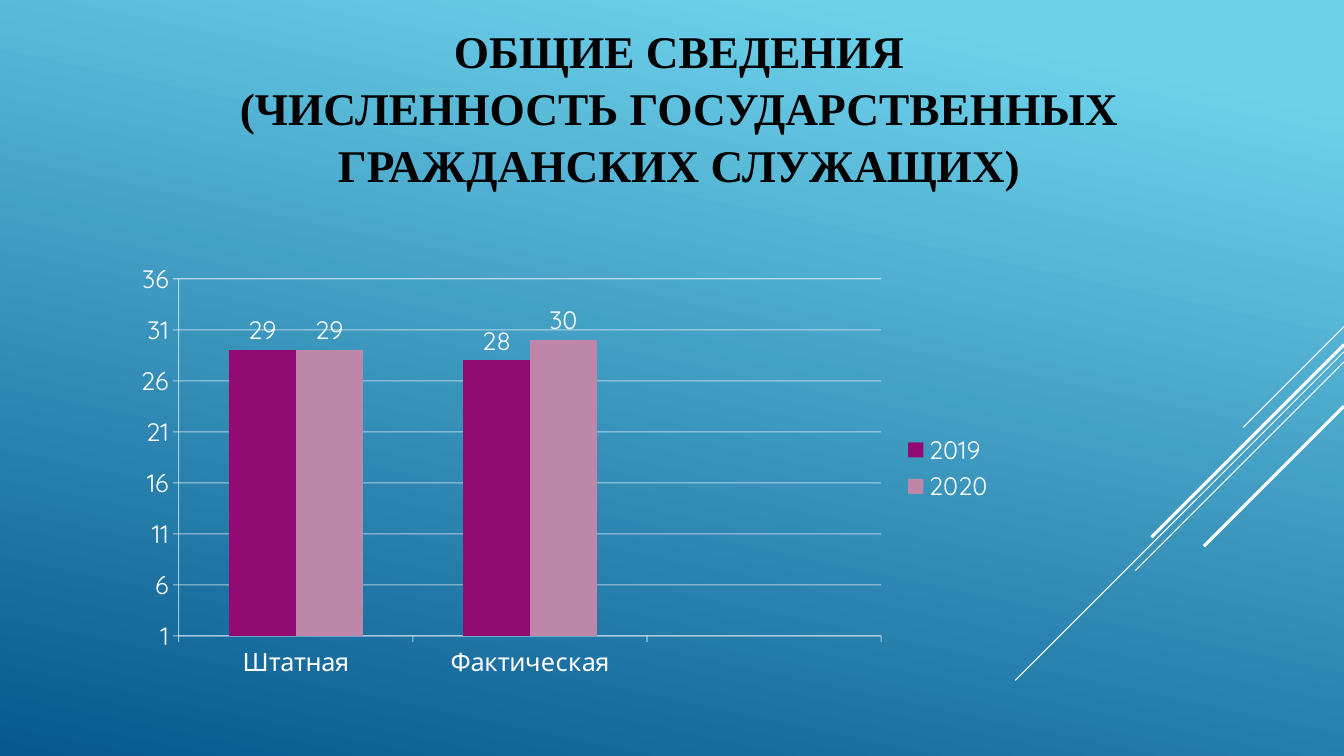
from dataclasses import dataclass

from lxml import etree
from pptx import Presentation
from pptx.chart.data import CategoryChartData
from pptx.dml.color import RGBColor
from pptx.enum.chart import XL_CHART_TYPE, XL_LABEL_POSITION, XL_LEGEND_POSITION, XL_TICK_MARK
from pptx.enum.shapes import MSO_CONNECTOR
from pptx.enum.text import MSO_ANCHOR, PP_ALIGN
from pptx.oxml import parse_xml
from pptx.oxml.ns import nsdecls, qn
from pptx.util import Inches, Pt

COLUMN = XL_CHART_TYPE.COLUMN_CLUSTERED
ABOVE = XL_LABEL_POSITION.OUTSIDE_END
RIGHT = XL_LEGEND_POSITION.RIGHT
OUT = XL_TICK_MARK.OUTSIDE
NONE = XL_TICK_MARK.NONE
STRAIGHT = MSO_CONNECTOR.STRAIGHT
MIDDLE = MSO_ANCHOR.MIDDLE
CENTER = PP_ALIGN.CENTER


@dataclass(frozen=True)
class Theme:
    sky: RGBColor = RGBColor.from_string("6ED2EB")
    sea: RGBColor = RGBColor.from_string("06588E")
    ink: RGBColor = RGBColor.from_string("000000")
    white: RGBColor = RGBColor.from_string("FFFFFF")
    bars: tuple = (RGBColor.from_string("920B72"), RGBColor.from_string("BE87AA"))
    head_font: str = "Times New Roman"
    body_font: str = "Quicksand"
    head_size: float = 32.4
    body_size: float = 18
    thin: float = 0.75
    thick: float = 2.25


THEME = Theme()
WIDTH, HEIGHT = 13.33, 7.5
TITLE = "ОБЩИЕ СВЕДЕНИЯ\v(ЧИСЛЕННОСТЬ ГОСУДАРСТВЕННЫХ ГРАЖДАНСКИХ СЛУЖАЩИХ)"
GROUPS = ("Штатная", "Фактическая", "")
STAFF = {"2019": (29, 28, None), "2020": (29, 30, None)}
# Top, run and weight of each diagonal
RAYS = (
    (3.24, 1.0, THEME.thin),
    (3.49, 3.26, THEME.thin),
    (3.59, 2.07, THEME.thin),
    (3.42, 1.91, THEME.thick),
    (4.03, 1.39, THEME.thick),
)


def paint_back(slide):
    fill = slide.background.fill
    fill.gradient()
    fill.gradient_angle = 258
    stops = ((0.1, THEME.sky), (1.0, THEME.sea))
    for stop, (place, color) in zip(fill.gradient_stops, stops):
        stop.position = place
        stop.color.rgb = color


def add_rays(slide, right):
    """Draw 45-degree lines running down and left from the right edge."""
    for top, run, weight in RAYS:
        ray = slide.shapes.add_connector(
            STRAIGHT, Inches(right), Inches(top), Inches(right - run), Inches(top + run))
        ray.line.color.rgb = THEME.white
        ray.line.width = Pt(weight)
        etree.SubElement(ray._element.spPr, qn("a:effectLst"))


def add_title(slide, left, top, width, height):
    box = slide.shapes.add_textbox(Inches(left), Inches(top), Inches(width), Inches(height))
    frame = box.text_frame
    frame.word_wrap = True
    frame.vertical_anchor = MIDDLE
    para = frame.paragraphs[0]
    para.text = TITLE
    para.alignment = CENTER
    para.line_spacing = 1.05
    para.font.name = THEME.head_font
    para.font.size = Pt(THEME.head_size)
    para.font.bold = True
    para.font.color.rgb = THEME.ink


def rule_line(line, alpha):
    line.color.rgb = THEME.white
    line.width = Pt(THEME.thin)
    tint = line._get_or_add_ln().find(".//" + qn("a:srgbClr"))
    etree.SubElement(tint, qn("a:alpha")).set("val", str(alpha * 1000))


def fix_plot(chart, **sides):
    """Pin the inner plot area to fractions of the chart box."""
    modes = "".join(f'<c:{side}Mode val="edge"/>' for side in ("x", "y"))
    sizes = "".join(f'<c:{side} val="{value}"/>' for side, value in sides.items())
    area = chart._chartSpace.chart.plotArea
    for old in area.findall(qn("c:layout")):
        area.remove(old)
    area.insert(0, parse_xml(
        f'<c:layout {nsdecls("c")}><c:manualLayout><c:layoutTarget val="inner"/>'
        f'{modes}{sizes}</c:manualLayout></c:layout>'))


def style_axes(chart):
    for axis in (chart.category_axis, chart.value_axis):
        axis.major_tick_mark = OUT
        axis.minor_tick_mark = NONE
        rule_line(axis.format.line, 60)
    scale = chart.value_axis
    scale.minimum_scale, scale.maximum_scale = 1, 36
    scale.major_unit = 5
    scale.has_major_gridlines = True
    rule_line(scale.major_gridlines.format.line, 60)


def add_staff(slide, left, top, width, height):
    data = CategoryChartData()
    data.categories = GROUPS
    for year, counts in STAFF.items():
        data.add_series(year, counts)
    chart = slide.shapes.add_chart(
        COLUMN, Inches(left), Inches(top), Inches(width), Inches(height), data).chart
    chart.has_title = False
    chart.font.name = THEME.body_font
    chart.font.size = Pt(THEME.body_size)
    chart.font.color.rgb = THEME.white
    chart.has_legend = True
    chart.legend.position = RIGHT
    chart.legend.include_in_layout = False
    style_axes(chart)
    fix_plot(chart, x=0.06, y=0.06, w=0.8, h=0.83)

    plot = chart.plots[0]
    plot.vary_by_categories = False
    plot.gap_width = 150
    plot.overlap = 0
    for series, color in zip(plot.series, THEME.bars):
        series.format.fill.solid()
        series.format.fill.fore_color.rgb = color
        labels = series.data_labels
        labels.show_value = True
        labels.position = ABOVE


def main():
    deck = Presentation()
    deck.slide_width, deck.slide_height = Inches(WIDTH), Inches(HEIGHT)
    slide = deck.slides.add_slide(deck.slide_layouts[6])
    paint_back(slide)
    add_rays(slide, WIDTH)
    add_title(slide, 2.07, 0.23, 9.33, 1.65)
    add_staff(slide, 1.25, 2.51, 8.71, 4.27)
    deck.save("out.pptx")


if __name__ == "__main__":
    main()
